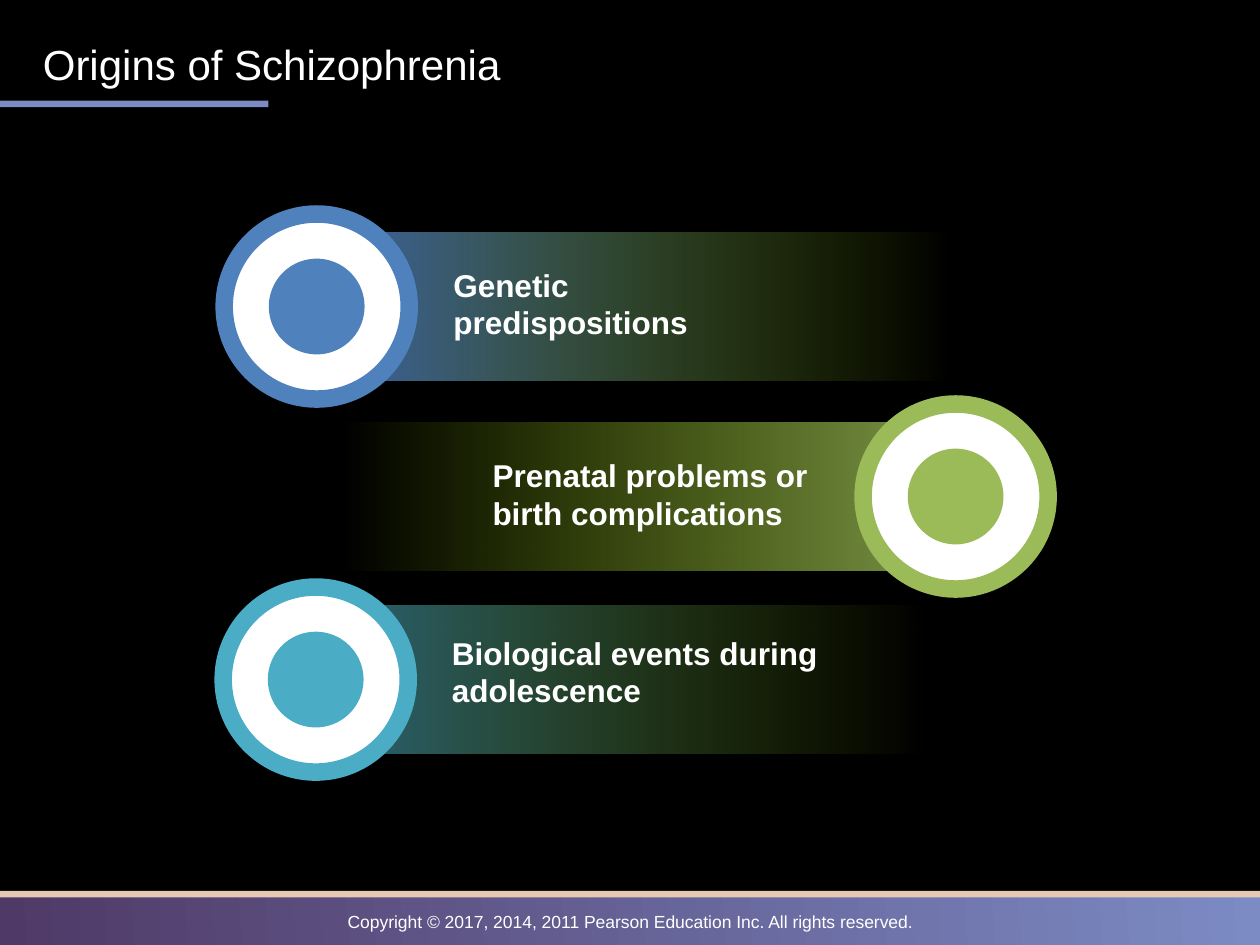
from dataclasses import dataclass

import pptx
import pptx.dml.color
import pptx.enum.shapes
import pptx.enum.text
import pptx.oxml
import pptx.oxml.ns
import pptx.util
from pptx.util import Cm

MSO_SHAPE = pptx.enum.shapes.MSO_SHAPE
PP_ALIGN = pptx.enum.text.PP_ALIGN


@dataclass(frozen=True)
class Theme:
    font: str = "Arial"
    background: str = "000000"
    text: str = "FFFFFF"
    accent: str = "7C8BC4"
    footer_dark: str = "4F3967"
    footer_edge: str = "E7C8B3"
    fade: str = "99CC00"
    blue: str = "4F81BD"
    green: str = "9BBB59"
    teal: str = "4BACC6"
    title_size: int = 24
    label_size: int = 18
    footer_size: int = 10
    ring_width: int = 10


THEME = Theme()


@dataclass(frozen=True)
class Origin:
    """One cause: a fading bar, its label and a ring; lengths in cm."""
    text: str
    color: str
    opacity: int
    middle: float
    bar_left: float
    ring_left: float
    label_box: tuple
    ring_on_right: bool = False


ORIGINS = [
    Origin("Genetic predispositions", THEME.blue, 75, 6.18, 7.65, 4.52,
           (8.89, 5.23, 6.3, 1.8)),
    Origin("Prenatal problems or birth complications", THEME.green, 75, 10.01, 6.83, 17.4,
           (9.68, 9.07, 7.75, 1.8), ring_on_right=True),
    Origin("Biological events during adolescence", THEME.teal, 56, 13.7, 7.19, 4.5,
           (8.86, 12.65, 9.78, 1.8)),
]
BAR_WIDTH, BAR_HEIGHT = 11.58, 3.0
RING_SIZE, DOT_SIZE = 3.73, 1.93


def rgb(color):
    return pptx.dml.color.RGBColor.from_string(color)


def add_plain_shape(slide, kind, left, top, width, height, color=None):
    shape = slide.shapes.add_shape(kind, Cm(left), Cm(top), Cm(width), Cm(height))
    shape.shadow.inherit = False
    shape.line.fill.background()
    if color:
        shape.fill.solid()
        shape.fill.fore_color.rgb = rgb(color)
    return shape


def set_gradient(shape, stops, angle=0):
    """Fill with two stops, each a colour and an opacity in percent."""
    shape.fill.gradient()
    shape.fill.gradient_angle = angle
    for stop, position, (color, opacity) in zip(shape.fill.gradient_stops, (0, 1), stops):
        stop.position = position
        stop.color.rgb = rgb(color)
    colors = shape._element.spPr.iter(pptx.oxml.ns.qn("a:srgbClr"))
    for element, (color, opacity) in zip(list(colors), stops):
        if opacity < 100:
            alpha = pptx.oxml.parse_xml(
                f'<a:alpha {pptx.oxml.ns.nsdecls("a")} val="{opacity * 1000}"/>')
            element.append(alpha)


def format_text(text_frame, text, size, align=PP_ALIGN.LEFT, bold=False):
    text_frame.word_wrap = True
    text_frame.text = text
    paragraph = text_frame.paragraphs[0]
    paragraph.alignment = align
    paragraph.font.name = THEME.font
    paragraph.font.size = pptx.util.Pt(size)
    paragraph.font.bold = bold
    paragraph.font.color.rgb = rgb(THEME.text)


def add_text(slide, box, text, size, **formatting):
    textbox = slide.shapes.add_textbox(*map(Cm, box))
    format_text(textbox.text_frame, text, size, **formatting)


def add_footer(slide):
    band = add_plain_shape(slide, MSO_SHAPE.RECTANGLE, 0, 17.98, 25.4, 1.07)
    set_gradient(band, [(THEME.footer_dark, 100), (THEME.accent, 100)], angle=4)
    add_plain_shape(slide, MSO_SHAPE.RECTANGLE, 0, 17.96, 25.4, 0.13, THEME.footer_edge)
    add_text(slide, (0, 18.24, 25.4, 0.69),
             "Copyright © 2017, 2014, 2011 Pearson Education Inc. All rights reserved.",
             THEME.footer_size, align=PP_ALIGN.CENTER)


def add_title(slide):
    add_plain_shape(slide, MSO_SHAPE.RECTANGLE, 0, 2.03, 5.41, 0.13, THEME.accent)
    title = slide.shapes.title
    title.left, title.top, title.width, title.height = map(Cm, (0.61, 0.53, 21.59, 1.5))
    title.text_frame.vertical_anchor = pptx.enum.text.MSO_ANCHOR.MIDDLE
    title.text_frame.auto_size = pptx.enum.text.MSO_AUTO_SIZE.NONE
    format_text(title.text_frame, "Origins of Schizophrenia", THEME.title_size)


def add_bar(slide, origin):
    bar = add_plain_shape(slide, MSO_SHAPE.RECTANGLE, origin.bar_left,
                          origin.middle - BAR_HEIGHT / 2, BAR_WIDTH, BAR_HEIGHT)
    stops = [(origin.color, origin.opacity), (THEME.fade, 0)]
    set_gradient(bar, stops[::-1] if origin.ring_on_right else stops)
    add_text(slide, origin.label_box, origin.text, THEME.label_size, bold=True)


def add_ring(slide, origin):
    center = origin.ring_left + RING_SIZE / 2
    for size, color in ((RING_SIZE, THEME.text), (DOT_SIZE, origin.color)):
        circle = add_plain_shape(slide, MSO_SHAPE.OVAL, center - size / 2,
                                 origin.middle - size / 2, size, size, color)
        if size == RING_SIZE:
            circle.line.color.rgb = rgb(origin.color)
            circle.line.width = pptx.util.Pt(THEME.ring_width)


def main():
    presentation = pptx.Presentation()
    presentation.slide_width, presentation.slide_height = Cm(25.4), Cm(19.05)
    slide = presentation.slides.add_slide(presentation.slide_layouts[5])
    slide.background.fill.solid()
    slide.background.fill.fore_color.rgb = rgb(THEME.background)

    # Frame of the slide
    add_footer(slide)
    add_title(slide)

    # Causes: each ring covers the strong end of its bar
    for origin in ORIGINS:
        add_bar(slide, origin)
        add_ring(slide, origin)

    presentation.save("out.pptx")


if __name__ == "__main__":
    main()
